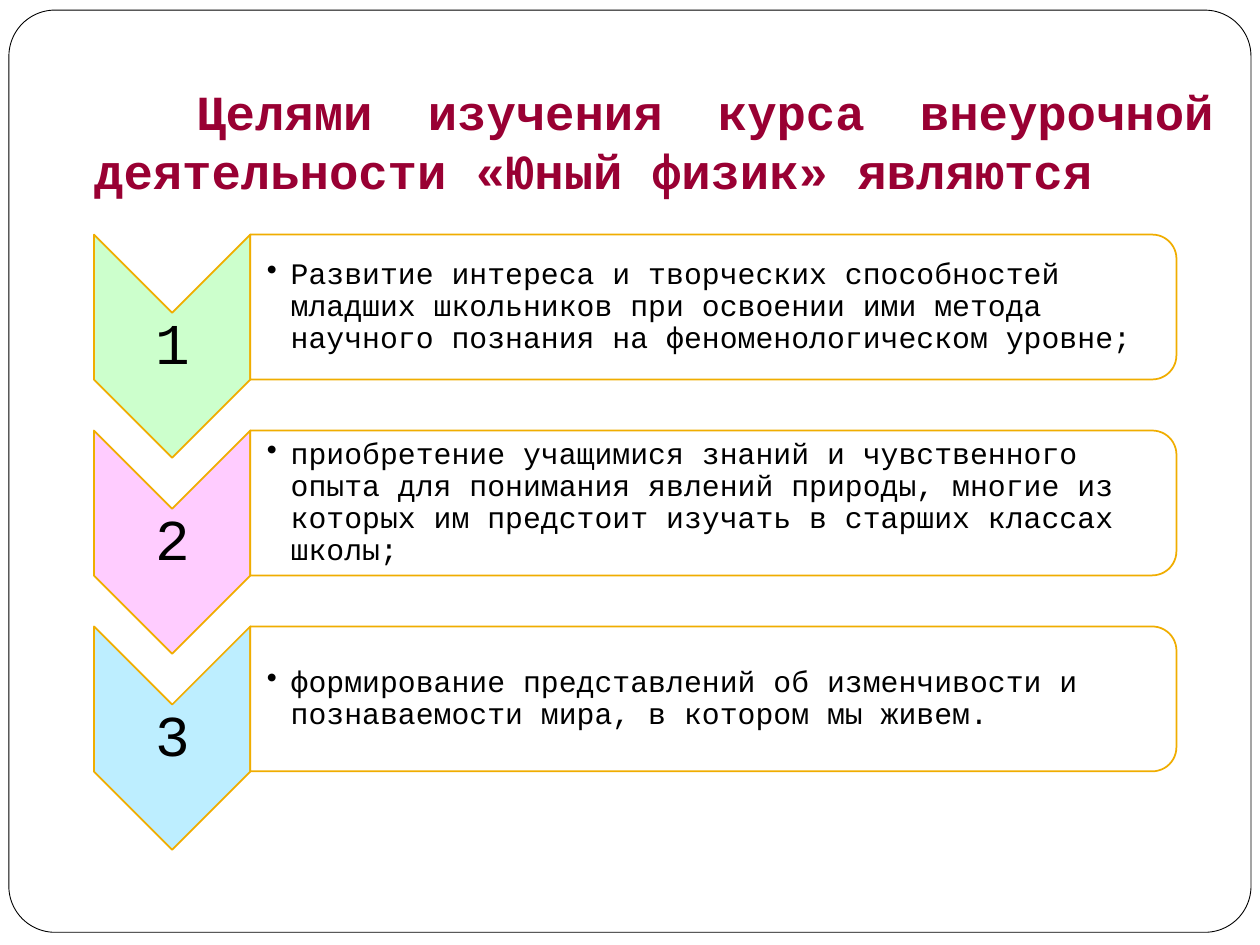
"""Build a slide listing the three goals of a school physics course."""
import dataclasses

import lxml.etree
import pptx
import pptx.dml.color
import pptx.enum.shapes
import pptx.enum.text
import pptx.oxml.ns
import pptx.util

Cm = pptx.util.Cm
Shapes = pptx.enum.shapes.MSO_SHAPE
Align = pptx.enum.text.PP_ALIGN
Anchor = pptx.enum.text.MSO_ANCHOR


@dataclasses.dataclass(frozen=True)
class Theme:
    font: str = "Courier New"
    title: str = "990033"
    text: str = "000000"
    paper: str = "FFFFFF"
    outline: str = "F0AD00"
    title_size: int = 28
    number_size: int = 33
    goal_size: int = 17


class GoalSlide:
    def __init__(self, deck, theme):
        self.theme = theme
        self.page = deck.slides.add_slide(deck.slide_layouts[6])

    def shape(self, kind, center, size, fill, line, weight=1.0, rotation=0, opacity=100):
        width, height = size
        left, top = center[0] - width / 2, center[1] - height / 2
        shape = self.page.shapes.add_shape(kind, Cm(left), Cm(top), Cm(width), Cm(height))
        shape.rotation = rotation
        shape.shadow.inherit = False
        shape.fill.solid()
        shape.fill.fore_color.rgb = pptx.dml.color.RGBColor.from_string(fill)
        shape.line.color.rgb = pptx.dml.color.RGBColor.from_string(line)
        shape.line.width = pptx.util.Pt(weight)
        if opacity < 100:
            color = shape._element.spPr.find(".//" + pptx.oxml.ns.qn("a:srgbClr"))
            alpha = lxml.etree.SubElement(color, pptx.oxml.ns.qn("a:alpha"))
            alpha.set("val", str(opacity * 1000))
        return shape

    def text(self, words, place, size, color, align, anchor, insets, bold=False, spacing=1.0):
        box = self.page.shapes.add_textbox(*map(Cm, place))
        frame = box.text_frame
        frame.word_wrap = True
        frame.vertical_anchor = anchor
        frame.margin_left, frame.margin_top, frame.margin_right, frame.margin_bottom = map(Cm, insets)
        para = frame.paragraphs[0]
        para.text = words
        para.alignment = align
        para.line_spacing = spacing
        para.font.name = self.theme.font
        para.font.size = pptx.util.Pt(size)
        para.font.bold = bold
        para.font.color.rgb = pptx.dml.color.RGBColor.from_string(color)
        return para

    def indent(self, para, margin, first_line, bullet=None):
        properties = para._p.get_or_add_pPr()
        properties.set("marL", str(Cm(margin)))
        properties.set("indent", str(Cm(first_line)))
        if bullet:
            mark = lxml.etree.Element(pptx.oxml.ns.qn("a:buChar"), char=bullet)
            properties.find(pptx.oxml.ns.qn("a:defRPr")).addprevious(mark)

    def frame(self):
        border = self.shape(Shapes.ROUNDED_RECTANGLE, (12.7, 9.5), (25.04, 18.59),
                            self.theme.paper, self.theme.text, weight=0.5)
        border.adjustments[0] = 0.05

    def title(self, words):
        para = self.text(words, (0.89, 1.52, 23.83, 2.39), self.theme.title_size, self.theme.title,
                         Align.JUSTIFY, Anchor.TOP, (0.25, 0.13, 0.25, 0.13), bold=True)
        para.space_before = pptx.util.Pt(5.8)
        self.indent(para, 0.76, 2.06)

    def goal(self, number, words, fill, top):
        theme = self.theme
        self.shape(Shapes.CHEVRON, (3.47, top + 2.25), (4.5, 3.15), fill, theme.outline, rotation=90)
        self.text(str(number), (1.9, top + 1.57, 3.15, 1.35), theme.number_size, theme.text,
                  Align.CENTER, Anchor.MIDDLE, (0.05,) * 4, spacing=0.9)
        self.shape(Shapes.ROUND_2_SAME_RECTANGLE, (14.38, top + 1.46), (2.92, 18.67),
                   theme.paper, theme.outline, rotation=90, opacity=90)
        para = self.text(words, (5.05, top + 0.14, 18.52, 2.64), theme.goal_size, theme.text,
                         Align.LEFT, Anchor.MIDDLE, (0.33, 0.03, 0.03, 0.03), spacing=0.9)
        self.indent(para, 0.48, -0.48, bullet="•")


def main():
    deck = pptx.Presentation()
    deck.slide_width, deck.slide_height = Cm(25.4), Cm(19.05)
    slide = GoalSlide(deck, Theme())
    slide.frame()
    slide.title("Целями изучения курса внеурочной деятельности «Юный физик» являются")
    goals = [
        ("Развитие интереса и творческих способностей младших школьников при освоении "
         "ими метода научного познания на феноменологическом уровне;", "CCFFCC"),
        ("приобретение учащимися знаний и чувственного опыта для понимания явлений природы, "
         "многие из которых им предстоит изучать в старших классах школы;", "FFCCFF"),
        ("формирование представлений об изменчивости и познаваемости мира, "
         "в котором мы живем.", "BDEEFF"),
    ]
    first_top, pitch = 4.73, 3.95
    for index, (words, fill) in enumerate(goals):
        slide.goal(index + 1, words, fill, first_top + index * pitch)
    deck.save("out.pptx")


if __name__ == "__main__":
    main()
